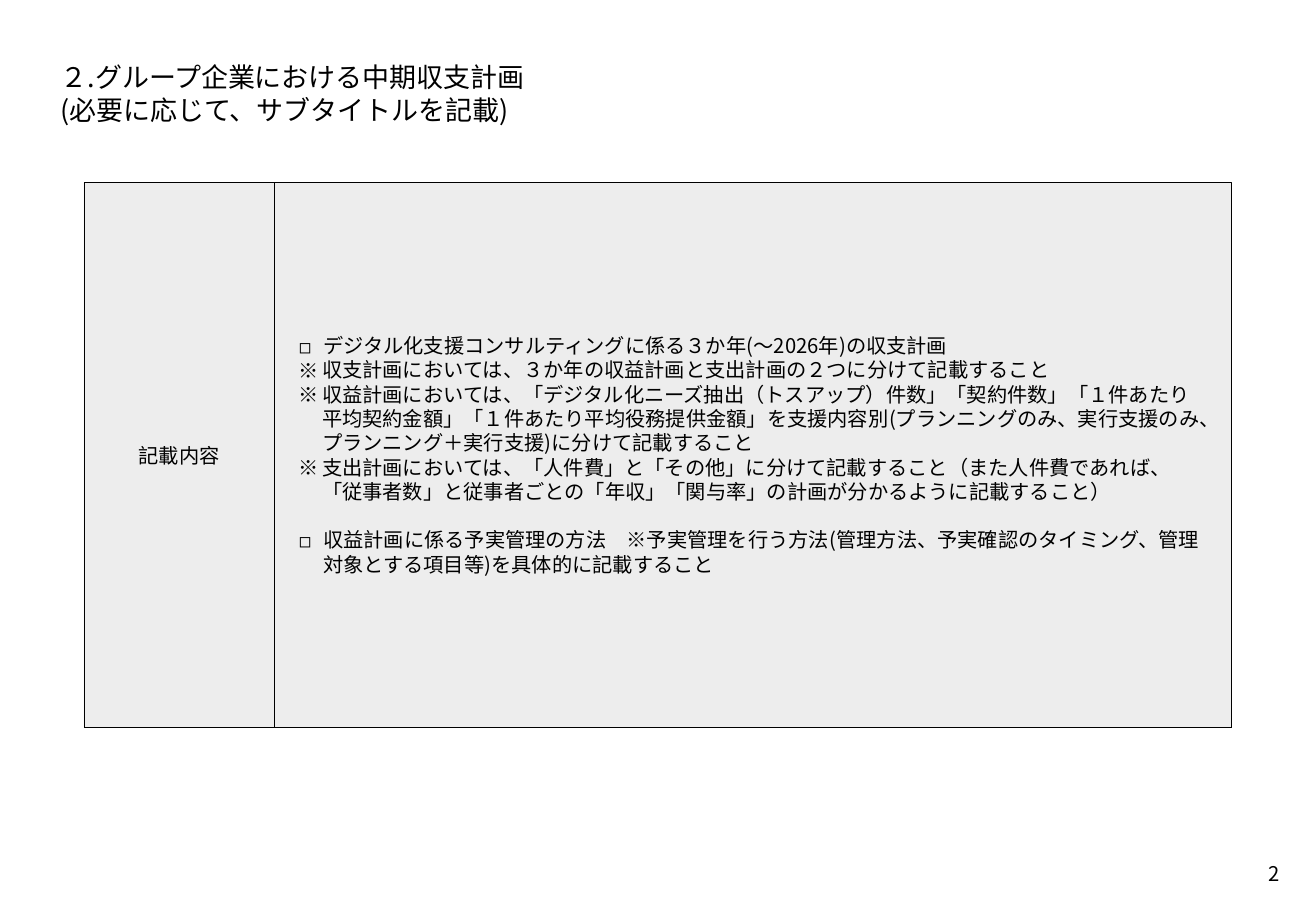
import dataclasses
import typing

import pptx
import pptx.dml.color
import pptx.enum.dml
import pptx.enum.shapes
import pptx.enum.text
import pptx.oxml.ns
import pptx.util
from lxml import etree
from pptx.util import Inches

BLACK = pptx.dml.color.RGBColor(0x00, 0x00, 0x00)
PALE_GREY = pptx.dml.color.RGBColor(0xED, 0xED, 0xED)
FONT_NAME = "Noto Sans CJK JP"
LINE_PITCH = 1.2  # line height relative to the font size
TITLE_SIZE, TEXT_SIZE = 16, 12
ALIGN = pptx.enum.text.PP_ALIGN
ANCHOR = pptx.enum.text.MSO_ANCHOR

PANEL_TOP, PANEL_HEIGHT = 1.5, 4.49
LABEL_LEFT, LABEL_WIDTH = 0.69, 1.57
DETAIL_WIDTH = 7.87


@dataclasses.dataclass(frozen=True)
class Item:
    bullet: str
    text: str
    indent: float
    gap_before: float = 0


ITEMS = (
    Item("◻", "デジタル化支援コンサルティングに係る３か年(～2026年)の収支計画", 0.2),
    Item("※", "収支計画においては、３か年の収益計画と支出計画の２つに分けて記載すること", 0.19),
    Item("※", "収益計画においては、「デジタル化ニーズ抽出（トスアップ）件数」「契約件数」"
         "「１件あたり平均契約金額」「１件あたり平均役務提供金額」を支援内容別"
         "(プランニングのみ、実行支援のみ、プランニング＋実行支援)に分けて記載すること", 0.19),
    Item("※", "支出計画においては、「人件費」と「その他」に分けて記載すること"
         "（また人件費であれば、「従事者数」と従事者ごとの「年収」「関与率」の"
         "計画が分かるように記載すること）", 0.19),
    Item("◻", "収益計画に係る予実管理の方法　※予実管理を行う方法"
         "(管理方法、予実確認のタイミング、管理対象とする項目等)を具体的に記載すること",
         0.2, TEXT_SIZE * LINE_PITCH),
)


def apply_format(target: typing.Any, values: dict[str, typing.Any]) -> None:
    for name, value in values.items():
        setattr(target, name, value)


def place(shape: typing.Any, left: float, top: float, width: float, height: float) -> None:
    apply_format(shape, {"left": Inches(left), "top": Inches(top),
                         "width": Inches(width), "height": Inches(height)})


def format_frame(frame: typing.Any, inset: float, anchor: typing.Any, wrap: bool = True) -> None:
    margin = Inches(inset)
    apply_format(frame, {"auto_size": pptx.enum.text.MSO_AUTO_SIZE.NONE, "word_wrap": wrap,
                         "vertical_anchor": anchor, "margin_left": margin, "margin_top": margin,
                         "margin_right": margin, "margin_bottom": margin})


def write(paragraph: typing.Any, text: str, size: float, align: typing.Any = ALIGN.LEFT,
          gap_before: float = 0) -> None:
    paragraph.text = text
    apply_format(paragraph, {"alignment": align, "space_before": pptx.util.Pt(gap_before),
                             "space_after": pptx.util.Pt(0),
                             "line_spacing": pptx.util.Pt(size * LINE_PITCH)})
    for run in paragraph.runs:
        apply_format(run.font, {"name": FONT_NAME, "size": pptx.util.Pt(size)})
        run.font.color.rgb = BLACK
        east_asian = etree.SubElement(run.font._element, pptx.oxml.ns.qn("a:ea"))
        east_asian.set("typeface", FONT_NAME)


def set_bullet(paragraph: typing.Any, item: Item) -> None:
    properties = paragraph._p.get_or_add_pPr()
    properties.set("marL", str(Inches(item.indent)))
    properties.set("indent", str(-Inches(item.indent)))
    for tag, attribute, value in (("a:buFont", "typeface", FONT_NAME),
                                  ("a:buChar", "char", item.bullet)):
        etree.SubElement(properties, pptx.oxml.ns.qn(tag)).set(attribute, value)


def paint_panel(shape: typing.Any) -> None:
    shape.fill.solid()
    shape.fill.fore_color.rgb = PALE_GREY
    shape.line.color.rgb = BLACK
    apply_format(shape.line, {"width": pptx.util.Pt(0.25),
                              "dash_style": pptx.enum.dml.MSO_LINE.ROUND_DOT})


def main() -> None:
    presentation = pptx.Presentation()
    apply_format(presentation, {"slide_width": Inches(10.83), "slide_height": Inches(7.5)})
    slide = presentation.slides.add_slide(presentation.slide_layouts[1])

    title = slide.shapes.title
    place(title, 0.3, 0.3, 10.24, 0.79)
    format_frame(title.text_frame, 0.2, ANCHOR.TOP)
    write(title.text_frame.paragraphs[0],
          "２.グループ企業における中期収支計画\v(必要に応じて、サブタイトルを記載)", TITLE_SIZE)

    details = slide.placeholders[1]
    place(details, LABEL_LEFT + LABEL_WIDTH, PANEL_TOP, DETAIL_WIDTH, PANEL_HEIGHT)
    paint_panel(details)
    format_frame(details.text_frame, 0.2, ANCHOR.MIDDLE)
    for index, item in enumerate(ITEMS):
        paragraph = (details.text_frame.add_paragraph() if index
                     else details.text_frame.paragraphs[0])
        write(paragraph, item.text, TEXT_SIZE, gap_before=item.gap_before)
        set_bullet(paragraph, item)

    label = slide.shapes.add_shape(
        pptx.enum.shapes.MSO_SHAPE.RECTANGLE, Inches(LABEL_LEFT), Inches(PANEL_TOP),
        Inches(LABEL_WIDTH), Inches(PANEL_HEIGHT))
    label.shadow.inherit = False
    paint_panel(label)
    format_frame(label.text_frame, 0.1, ANCHOR.MIDDLE)
    write(label.text_frame.paragraphs[0], "記載内容", TEXT_SIZE, ALIGN.CENTER)

    page_number = slide.shapes.add_textbox(
        Inches(10.24), Inches(6.99), Inches(0.39), Inches(0.39))
    format_frame(page_number.text_frame, 0.1, ANCHOR.TOP, wrap=False)
    write(page_number.text_frame.paragraphs[0], "2", TEXT_SIZE, ALIGN.RIGHT)

    presentation.save("out.pptx")


if __name__ == "__main__":
    main()
